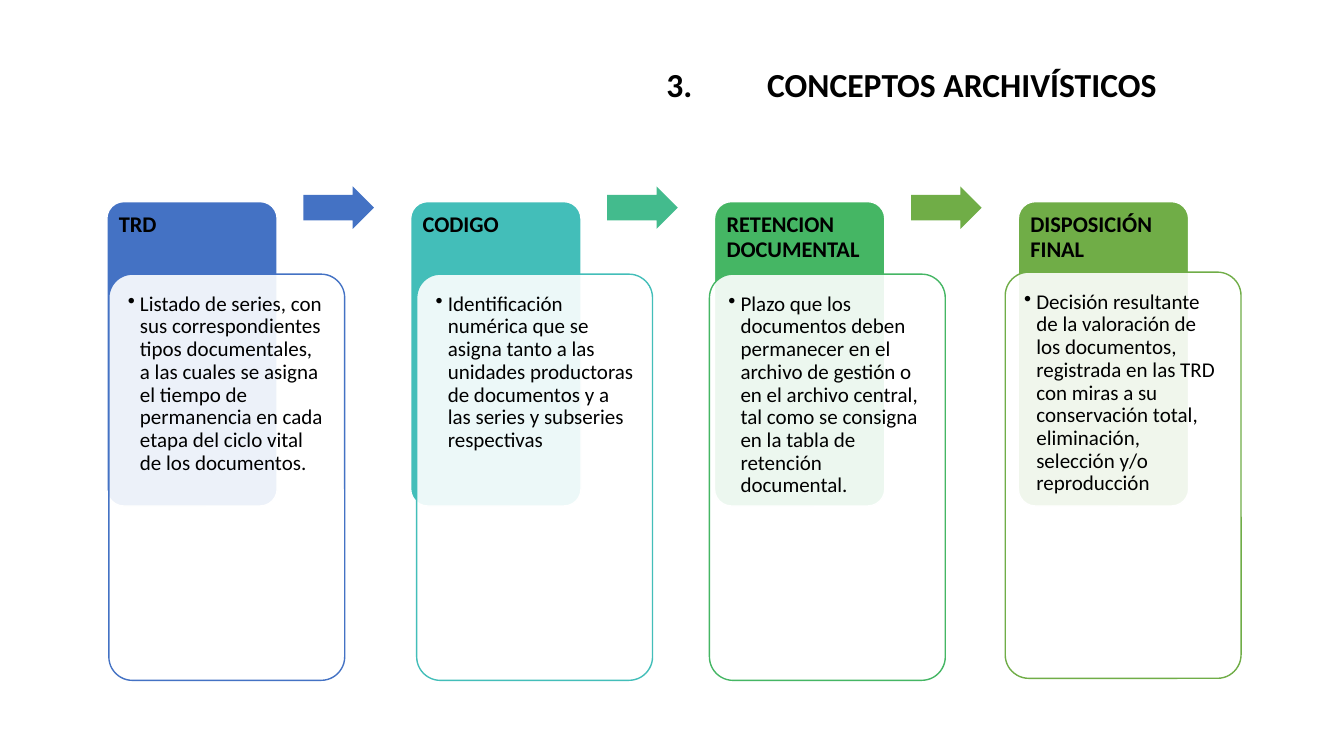
import dataclasses

import pptx
import pptx.dml.color
import pptx.enum.shapes
import pptx.enum.text
import pptx.oxml.ns
import pptx.util
from lxml import etree

SHAPE = pptx.enum.shapes.MSO_SHAPE
ALIGN = pptx.enum.text.PP_ALIGN.LEFT
ANCHOR = pptx.enum.text.MSO_ANCHOR
qn = pptx.oxml.ns.qn


@dataclasses.dataclass(frozen=True)
class Theme:
    font: str = "Calibri"
    ink: str = "000000"
    paper: str = "FFFFFF"
    title_size: int = 24
    heading_size: int = 16
    body_size: int = 15
    line_width: float = 1
    line_spacing: float = 0.9
    panel_alpha: int = 90
    cards: tuple = ("4472C4", "43BEB9", "45B664", "70AD47")
    arrows: tuple = ("4472C4", "43BB8D", "70AD47")


# The slide is a grid of 160 columns by 90 rows.
COLUMNS, ROWS = 160, 90
CARD_LEFT, CARD_TOP, CARD_PITCH = 12.72, 24, 36.17
CARD_SIZE = (20.28, 36.24)
PANEL_SIZE = (28.08, 48.36)
ARROW_SHIFT, ARROW_TOP = 23.4, 22.2
ARROW_SIZE = (8.4, 5.04)

# Heading, body, panel shift from its card in columns, panel top in rows.
CONCEPTS = [
    ("TRD",
     "Listado de series, con sus correspondientes tipos documentales, a las "
     "cuales se asigna el tiempo de permanencia en cada etapa del ciclo vital "
     "de los documentos.", 0.24, 32.64),
    ("CODIGO",
     "Identificación numérica que se asigna tanto a las unidades productoras "
     "de documentos y a las series y subseries respectivas", 0.72, 32.64),
    ("RETENCION DOCUMENTAL",
     "Plazo que los documentos deben permanecer en el archivo de gestión o en "
     "el archivo central, tal como se consigna en la tabla de retención "
     "documental.", -0.6, 32.64),
    ("DISPOSICIÓN FINAL",
     "Decisión resultante de la valoración de los documentos, registrada en "
     "las TRD con miras a su conservación total, eliminación, selección y/o "
     "reproducción", -1.56, 32.4),
]


class Deck:
    """Holds the theme and the current slide."""

    def __init__(self, theme):
        self.theme = theme
        self.prs = pptx.Presentation()
        self.prs.slide_width = pptx.util.Inches(13.33)
        self.prs.slide_height = pptx.util.Inches(7.5)
        self.slide = self.prs.slides.add_slide(self.prs.slide_layouts[5])

    def box(self, left, top, width, height):
        """Turn columns and rows into slide lengths."""
        col = self.prs.slide_width / COLUMNS
        row = self.prs.slide_height / ROWS
        return [int(n) for n in (left * col, top * row, width * col, height * row)]

    def color(self, value):
        return pptx.dml.color.RGBColor.from_string(value)

    def set_text(self, tf, text, size, bold=False, indent=(0, 0), bullet=False):
        """Fill a frame with one paragraph; indent is margin and first line."""
        tf.text = text
        tf.word_wrap = True
        p = tf.paragraphs[0]
        p.alignment = ALIGN
        p.line_spacing = self.theme.line_spacing
        pPr = p._p.get_or_add_pPr()
        margin, first = (pptx.util.Inches(n) for n in indent)
        pPr.set("marL", str(margin))
        pPr.set("indent", str(first))
        if bullet:
            etree.SubElement(pPr, qn("a:buChar")).set("char", "•")
        for r in p.runs:
            r.font.name = self.theme.font
            r.font.size = pptx.util.Pt(size)
            r.font.bold = bold
            r.font.color.rgb = self.color(self.theme.ink)

    def title(self, text, *place):
        s = self.slide.shapes.title
        s.left, s.top, s.width, s.height = self.box(*place)
        tf = s.text_frame
        tf.auto_size = pptx.enum.text.MSO_AUTO_SIZE.NONE
        tf.vertical_anchor = ANCHOR.MIDDLE
        self.set_text(tf, text, self.theme.title_size, True, indent=(3, -1))

    def shape(self, kind, place, fill, line=None, adjust=(0.1,)):
        s = self.slide.shapes.add_shape(kind, *self.box(*place))
        s.shadow.inherit = False
        for i, value in enumerate(adjust):
            s.adjustments[i] = value
        s.fill.solid()
        s.fill.fore_color.rgb = self.color(fill)
        if line:
            s.line.color.rgb = self.color(line)
            s.line.width = pptx.util.Pt(self.theme.line_width)
        else:
            s.line.fill.background()
        return s

    def text_area(self, s, inset):
        tf = s.text_frame
        tf.vertical_anchor = ANCHOR.TOP
        tf.margin_left = tf.margin_right = pptx.util.Inches(inset)
        tf.margin_top = tf.margin_bottom = pptx.util.Inches(inset)
        return tf

    def card(self, heading, left, color):
        s = self.shape(SHAPE.ROUNDED_RECTANGLE, (left, CARD_TOP, *CARD_SIZE),
                       color, self.theme.paper)
        self.set_text(self.text_area(s, 0.07), heading,
                      self.theme.heading_size, True)

    def panel(self, body, left, top, color):
        s = self.shape(SHAPE.ROUNDED_RECTANGLE, (left, top, *PANEL_SIZE),
                       self.theme.paper, color)
        clr = s.element.spPr.find(qn("a:solidFill")).find(qn("a:srgbClr"))
        alpha = etree.SubElement(clr, qn("a:alpha"))
        alpha.set("val", str(self.theme.panel_alpha * 1000))
        self.set_text(self.text_area(s, 0.12), body, self.theme.body_size,
                      indent=(0.12, -0.12), bullet=True)

    def arrow(self, left, color):
        self.shape(SHAPE.RIGHT_ARROW, (left, ARROW_TOP, *ARROW_SIZE), color,
                   adjust=(0.6, 0.5))


def main():
    theme = Theme()
    deck = Deck(theme)
    deck.title("3.\tCONCEPTOS ARCHIVÍSTICOS", 54.12, 1.56, 88.8, 17.4)
    for i, (heading, body, shift, top) in enumerate(CONCEPTS):
        left = CARD_LEFT + i * CARD_PITCH
        deck.card(heading, left, theme.cards[i])
        deck.panel(body, left + shift, top, theme.cards[i])
        if i < len(theme.arrows):
            deck.arrow(left + ARROW_SHIFT, theme.arrows[i])
    deck.prs.save("out.pptx")


if __name__ == "__main__":
    main()
